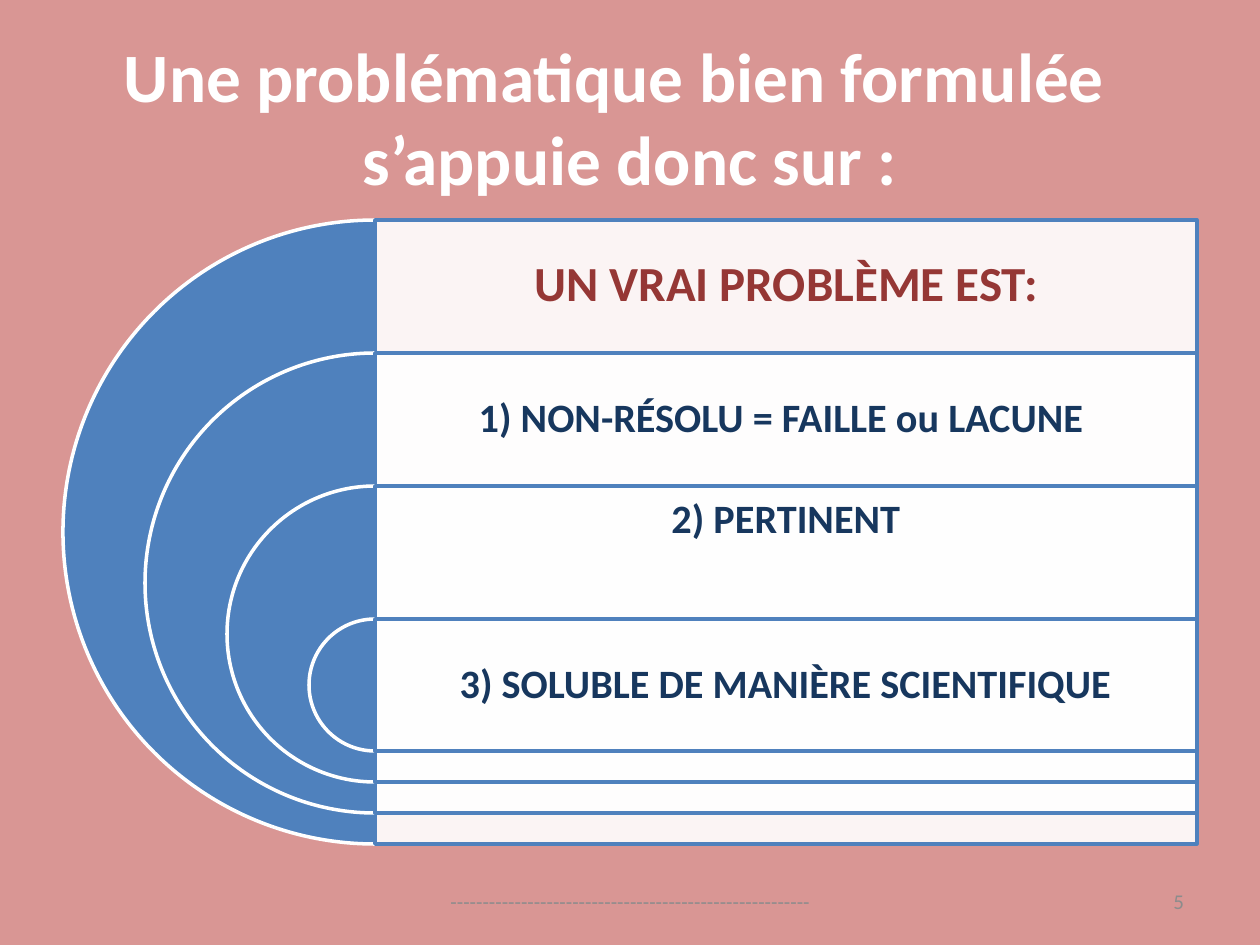
import pptx
import pptx.util
import pptx.dml.color
import pptx.enum.shapes
import pptx.enum.text
import pptx.oxml.ns
from dataclasses import dataclass
from lxml import etree

PX = 914400 / 126
ALIGN = pptx.enum.text.PP_ALIGN
ANCHOR = pptx.enum.text.MSO_ANCHOR
SHAPE = pptx.enum.shapes.MSO_SHAPE


@dataclass(frozen=True)
class Theme:
    font: str = "Calibri"
    background: str = "D99694"
    white: str = "FFFFFF"
    blue: str = "4F81BD"
    heading: str = "953735"
    item: str = "17375E"
    muted: str = "8C8C8C"
    title_size: float = 39.6
    heading_size: float = 28
    item_size: float = 23
    footer_size: float = 12
    line_width: float = 2


THEME = Theme()

# Stacked half discs share one vertical axis; each level is lower and smaller
AXIS_X, TOP, BAND_WIDTH = 375, 220, 822
OUTER, SIZE_STEP, LEVEL_STEP = 624, 164, 133
LABEL_HEIGHT = 132

# Text, size, colour, inset and anchor of each level
LEVELS = [
    ("UN VRAI PROBLÈME EST:", THEME.heading_size, THEME.heading, 15, ANCHOR.MIDDLE),
    ("1) NON-RÉSOLU = FAILLE ou LACUNE ", THEME.item_size, THEME.item, 13, ANCHOR.MIDDLE),
    ("2) PERTINENT", THEME.item_size, THEME.item, 13, ANCHOR.TOP),
    ("3) SOLUBLE DE MANIÈRE SCIENTIFIQUE", THEME.item_size, THEME.item, 13, ANCHOR.MIDDLE),
]


def px(*values):
    return [pptx.util.Emu(round(v * PX)) for v in values]


def rgb(value):
    return pptx.dml.color.RGBColor.from_string(value)


def format_text(tf, size, color, bold=False, align=ALIGN.CENTER, spacing=None):
    for p in tf.paragraphs:
        p.alignment = align
        p.line_spacing = spacing
        for r in p.runs:
            r.font.name = THEME.font
            r.font.size = pptx.util.Pt(size)
            r.font.bold = bold
            r.font.color.rgb = rgb(color)


def add_text(s, box, text, size, color, inset=(13, 6), anchor=ANCHOR.MIDDLE, **style):
    tf = s.shapes.add_textbox(*px(*box)).text_frame
    tf.word_wrap = True
    tf.vertical_anchor = anchor
    tf.margin_left = tf.margin_right = px(inset[0])[0]
    tf.margin_top = tf.margin_bottom = px(inset[1])[0]
    tf.text = text
    format_text(tf, size, color, **style)


def add_panel(s, kind, box, fill, line, opacity=None):
    sp = s.shapes.add_shape(kind, *px(*box))
    sp.shadow.inherit = False
    sp.fill.solid()
    sp.fill.fore_color.rgb = rgb(fill)
    sp.line.color.rgb = rgb(line)
    sp.line.width = pptx.util.Pt(THEME.line_width)
    if opacity is not None:
        qn = pptx.oxml.ns.qn
        color = sp.element.spPr.find(qn("a:solidFill")).find(qn("a:srgbClr"))
        etree.SubElement(color, qn("a:alpha")).set("val", str(opacity * 1000))
    return sp


def add_level(s, index, text, size, color, inset, anchor):
    top = TOP + index * LEVEL_STEP
    disc = OUTER - index * SIZE_STEP
    # Left half disc: from 90 to 270 degrees, in 60000ths of a degree
    pie = add_panel(s, SHAPE.PIE, (AXIS_X - disc / 2, top, disc, disc),
                    THEME.blue, THEME.white)
    pie.adjustments[0], pie.adjustments[1] = 54, 162
    add_panel(s, SHAPE.RECTANGLE, (AXIS_X, top, BAND_WIDTH, disc),
              THEME.white, THEME.blue, opacity=90)
    add_text(s, (AXIS_X, top, BAND_WIDTH, LABEL_HEIGHT), text, size, color,
             inset=(inset, inset), anchor=anchor, bold=True, spacing=0.9)


def add_title(s, text):
    title = s.shapes.title
    title.left, title.top, title.width, title.height = px(63, 38, 1134, 157)
    tf = title.text_frame
    tf.vertical_anchor = ANCHOR.MIDDLE
    tf.text = text
    format_text(tf, THEME.title_size, THEME.white, bold=True)


def main():
    prs = pptx.Presentation()
    prs.slide_width, prs.slide_height = px(1260, 945)
    s = prs.slides.add_slide(prs.slide_layouts[5])
    s.background.fill.solid()
    s.background.fill.fore_color.rgb = rgb(THEME.background)

    add_title(s, "Une problématique bien formulée  \vs’appuie donc sur :")

    # Nested levels, from the outermost to the innermost
    for index, level in enumerate(LEVELS):
        add_level(s, index, *level)

    # Footer rule and page number
    add_text(s, (431, 876, 399, 50), "-" * 56, THEME.footer_size, THEME.muted)
    add_text(s, (903, 876, 294, 50), "5", THEME.footer_size, THEME.muted,
             align=ALIGN.RIGHT)

    prs.save("out.pptx")


if __name__ == "__main__":
    main()
